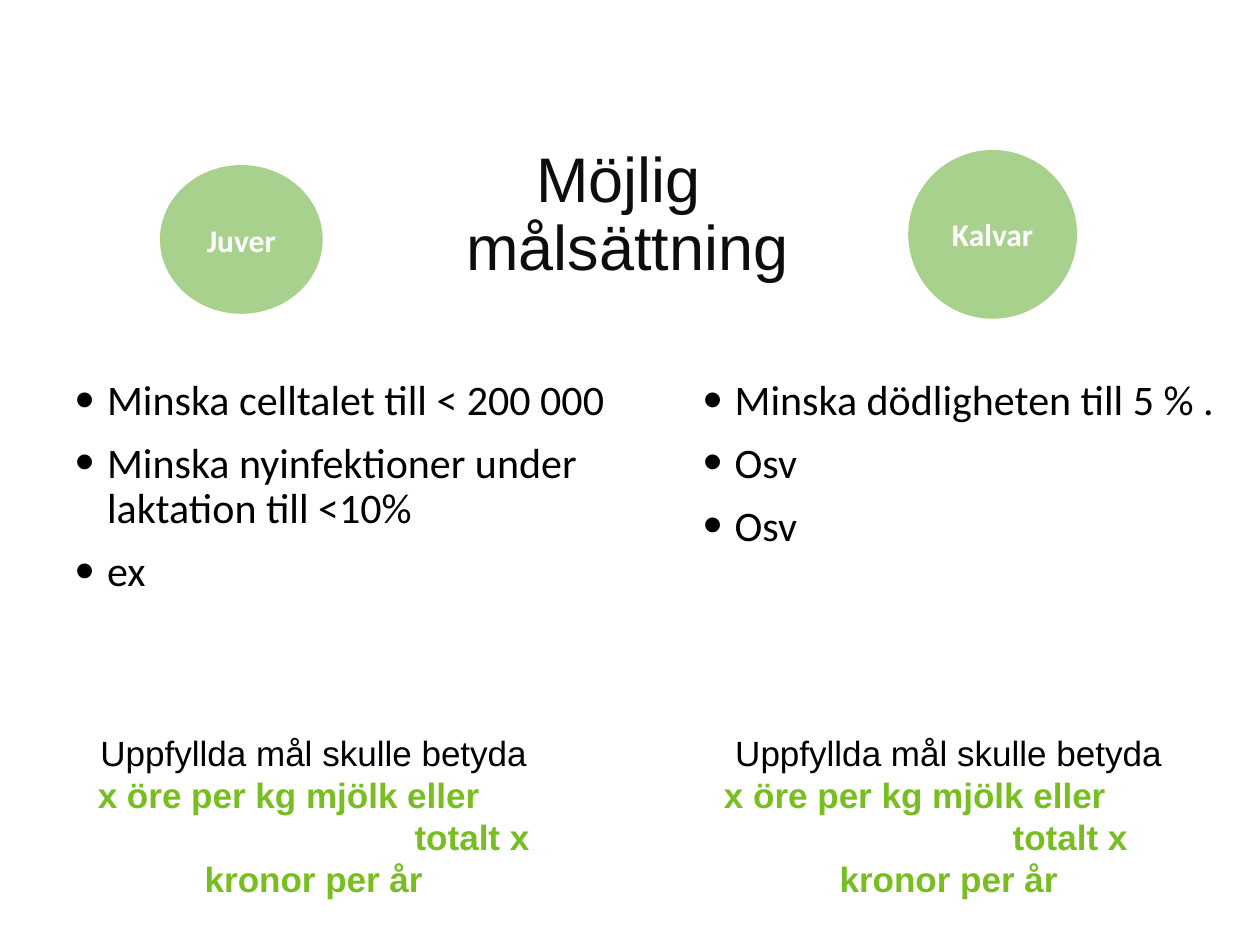
from lxml.etree import SubElement
from pptx import Presentation
from pptx.dml.color import RGBColor
from pptx.enum.shapes import MSO_SHAPE
from pptx.enum.text import MSO_ANCHOR as Anchor, MSO_AUTO_SIZE as AutoSize, PP_ALIGN as Align
from pptx.oxml.ns import qn
from pptx.util import Pt

BLACK = RGBColor(0x00, 0x00, 0x00)
TITLE_INK = RGBColor(0x0D, 0x0D, 0x0D)
WHITE = RGBColor(0xFF, 0xFF, 0xFF)
PALE_GREEN = RGBColor(0xA9, 0xD1, 0x8E)
BRIGHT_GREEN = RGBColor(0x78, 0xBE, 0x20)

GOALS_TOP = 213
EFFECT_TOP = 414.7


def place(shape, left, top, width, height):
    shape.left, shape.top = Pt(left), Pt(top)
    shape.width, shape.height = Pt(width), Pt(height)


def add_run(paragraph, text, size, color, font="Arial", bold=False):
    run = paragraph.add_run()
    run.text = text
    run.font.name, run.font.size, run.font.bold = font, Pt(size), bold
    run.font.color.rgb = color


def paragraph_at(frame, index):
    return frame.paragraphs[0] if index == 0 else frame.add_paragraph()


def add_bullet(paragraph):
    props = paragraph._p.get_or_add_pPr()
    props.set("marL", str(Pt(18)))
    props.set("indent", str(-Pt(18)))
    color = SubElement(props, qn("a:buClr"))
    SubElement(color, qn("a:srgbClr"), val=str(BLACK))
    SubElement(props, qn("a:buSzPct"), val="130000")
    SubElement(props, qn("a:buFont"), typeface="Arial")
    SubElement(props, qn("a:buChar"), char="•")


def fill_title(title):
    place(title, -1.4, 78.5, 720, 90)
    frame = title.text_frame
    frame.auto_size = AutoSize.NONE
    frame.vertical_anchor = Anchor.MIDDLE
    heading = frame.paragraphs[0]
    heading.alignment, heading.line_spacing = Align.CENTER, 0.9
    add_run(heading, "Möjlig ", 36, TITLE_INK)
    heading.add_line_break()
    add_run(heading, "målsättning", 36, TITLE_INK)


def fill_goals(body, left, width, height, goals):
    place(body, left, GOALS_TOP, width, height)
    frame = body.text_frame
    frame.auto_size = AutoSize.NONE
    for index, goal in enumerate(goals):
        paragraph = paragraph_at(frame, index)
        add_bullet(paragraph)
        paragraph.line_spacing = 0.9
        paragraph.space_before = Pt(10 if index else 0)
        add_run(paragraph, goal, 24, BLACK, "Calibri")


def add_effect(slide, left, width, total_indent):
    """Add the pay-off text, with its total set in from the left."""
    box = slide.shapes.add_textbox(Pt(left), Pt(EFFECT_TOP), Pt(width), Pt(80))
    frame = box.text_frame
    frame.word_wrap = True
    frame.auto_size = AutoSize.SHAPE_TO_FIT_TEXT
    lines = [
        ("Uppfyllda mål skulle betyda", None, BLACK),
        ("x öre per kg mjölk eller", 2, BRIGHT_GREEN),
        ("totalt x", total_indent, BRIGHT_GREEN),
        ("kronor per år", None, BRIGHT_GREEN),
    ]
    for index, (text, indent, color) in enumerate(lines):
        paragraph = paragraph_at(frame, index)
        paragraph.alignment = Align.CENTER if indent is None else Align.LEFT
        if indent is not None:
            paragraph._p.get_or_add_pPr().set("marL", str(Pt(indent)))
        add_run(paragraph, text, 20, color, bold=color == BRIGHT_GREEN)


def add_topic(slide, name, left, top, width, height):
    circle = slide.shapes.add_shape(
        MSO_SHAPE.OVAL, Pt(left), Pt(top), Pt(width), Pt(height))
    circle.shadow.inherit = False
    circle.fill.solid()
    circle.fill.fore_color.rgb = PALE_GREEN
    circle.line.fill.background()
    circle.text_frame.vertical_anchor = Anchor.MIDDLE
    label = circle.text_frame.paragraphs[0]
    label.alignment = Align.CENTER
    add_run(label, name, 18, WHITE, "Calibri", bold=True)


def main():
    deck = Presentation()
    deck.slide_width, deck.slide_height = Pt(720), Pt(540)
    slide = deck.slides.add_slide(deck.slide_layouts[3])
    title, udder_goals, calf_goals = slide.placeholders

    # Title and goal lists
    fill_title(title)
    fill_goals(udder_goals, 36, 318.2, 221, [
        "Minska celltalet till < 200 000",
        "Minska nyinfektioner under laktation till <10%",
        "ex",
    ])
    fill_goals(calf_goals, 394.6, 324, 281.5, [
        "Minska dödligheten till 5 % .", "Osv", "Osv"])

    # What reaching the goals is worth
    add_effect(slide, 46.8, 265, 183)
    add_effect(slide, 404.6, 275, 167)

    # Topic circles
    add_topic(slide, "Kalvar", 519, 85.7, 96.5, 96.5)
    add_topic(slide, "Juver", 91.4, 94.3, 93, 85)

    deck.save("out.pptx")


if __name__ == "__main__":
    main()
